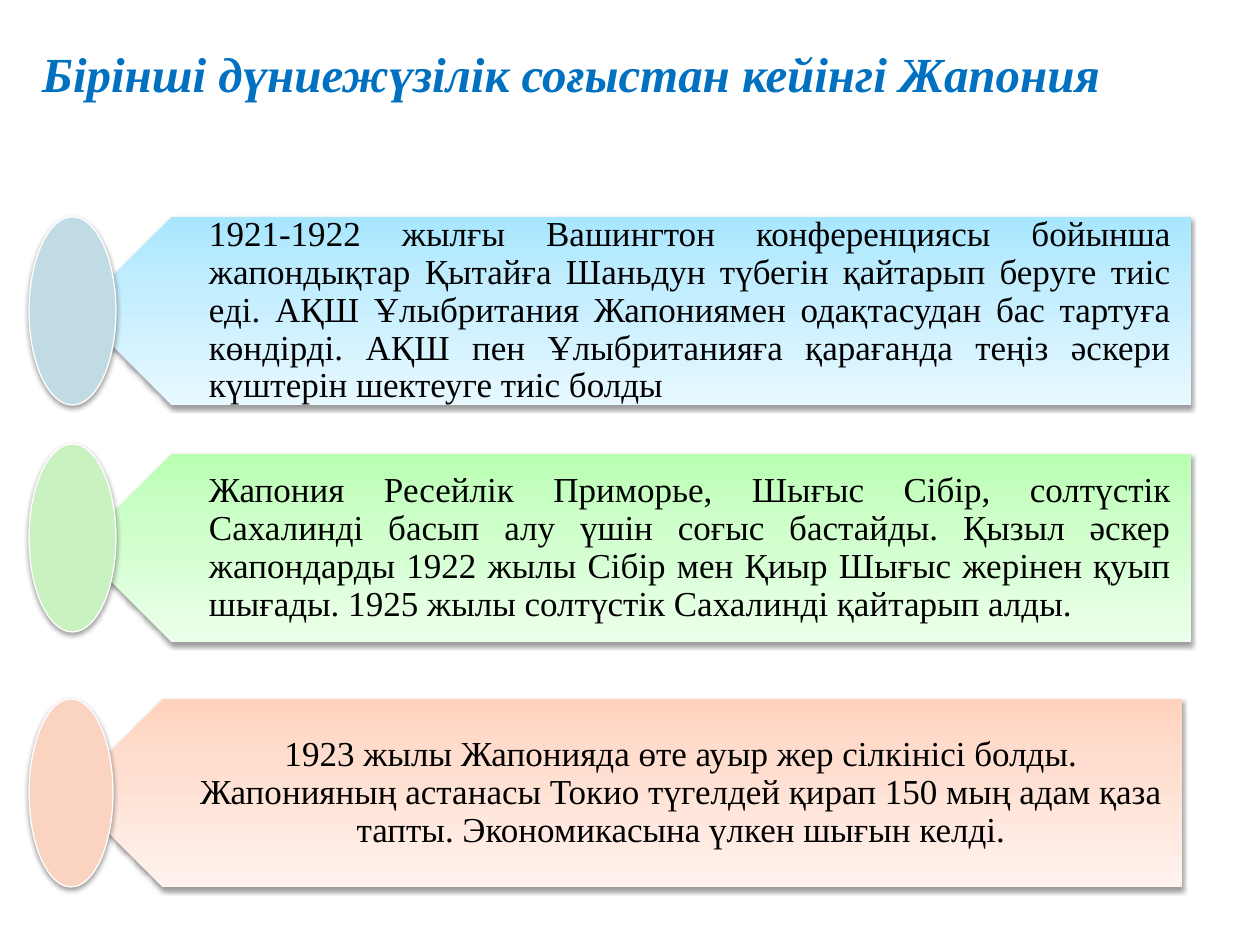
"""Build a slide on Japan after the First World War with three arrow bands."""
import copy
import dataclasses

import pptx
import pptx.dml.color
import pptx.enum.shapes
import pptx.enum.text
import pptx.oxml
import pptx.oxml.ns
import pptx.util

SHAPE = pptx.enum.shapes.MSO_SHAPE
ALIGN = pptx.enum.text.PP_ALIGN
SCALE = 914400 / 126


@dataclasses.dataclass
class Theme:
    """Hold the colours, font and type sizes."""
    font: str = "Times New Roman"
    title: str = "0070C0"
    text: str = "000000"
    edge: str = "FFFFFF"
    head: int = 28
    body: int = 20
    blue: tuple = ("A7E6FF", "C1EDFF", "E7F8FF")
    green: tuple = ("B9FFB2", "CDFFC9", "ECFFEA")
    peach: tuple = ("FFD2BD", "FFDED0", "FFF2ED")
    dots: tuple = ("C1DBE5", "CAF1C0", "FBD3C1")


def emu(px):
    """Turn px into EMU."""
    return pptx.util.Emu(round(px * SCALE))


def color(code):
    """Turn a hex code into a colour."""
    return pptx.dml.color.RGBColor.from_string(code)


class Deck:
    """Hold the style and the current slide."""

    def __init__(self, theme):
        """Start a deck with one blank slide."""
        self.theme = theme
        self.prs = pptx.Presentation()
        self.prs.slide_width, self.prs.slide_height = emu(1260), emu(945)
        self.slide = self.prs.slides.add_slide(self.prs.slide_layouts[6])

    def shape(self, kind, box):
        """Add a preset shape with a soft shadow below it."""
        shape = self.slide.shapes.add_shape(kind, *map(emu, box))
        shape.shadow.inherit = False
        effect = shape.element.spPr.find(pptx.oxml.ns.qn("a:effectLst"))
        effect.append(pptx.oxml.parse_xml(
            f'<a:outerShdw {pptx.oxml.ns.nsdecls("a")} blurRad="39370" '
            'dist="20320" dir="5400000" rotWithShape="0">'
            '<a:srgbClr val="000000"><a:alpha val="38000"/></a:srgbClr>'
            '</a:outerShdw>'))
        return shape

    def arrow(self, box, shades):
        """Add a left-pointing band with a three-stop gradient."""
        shape = self.shape(SHAPE.PENTAGON, box)
        shape.rotation = 180
        shape.line.fill.background()
        shape.fill.gradient()
        shape.fill.gradient_angle = 90
        first = shape.element.xpath(".//a:gs")[0]
        first.addnext(copy.deepcopy(first))
        for stop, shade, place in zip(shape.fill.gradient_stops, shades, (0, 0.35, 1)):
            stop.color.rgb = color(shade)
            stop.position = place

    def dot(self, box, shade):
        """Add an ellipse with a thin edge."""
        shape = self.shape(SHAPE.OVAL, box)
        shape.fill.solid()
        shape.fill.fore_color.rgb = color(shade)
        shape.line.color.rgb = color(self.theme.edge)
        shape.line.width = pptx.util.Pt(0.75)

    def text(self, box, words, size, shade, pads, align=ALIGN.JUSTIFY,
             middle=False, lead=None, strong=None):
        """Add a wrapped text box with one paragraph."""
        frame = self.slide.shapes.add_textbox(*map(emu, box)).text_frame
        frame.word_wrap = True
        (frame.margin_left, frame.margin_top,
         frame.margin_right, frame.margin_bottom) = map(emu, pads)
        anchor = pptx.enum.text.MSO_ANCHOR
        frame.vertical_anchor = anchor.MIDDLE if middle else anchor.TOP
        para = frame.paragraphs[0]
        para.alignment = align
        para.line_spacing = lead
        run = para.add_run()
        run.text = words
        run.font.name = self.theme.font
        run.font.size = pptx.util.Pt(size)
        run.font.color.rgb = color(shade)
        run.font.bold = run.font.italic = strong


def main():
    """Draw the title and the three bands."""
    theme = Theme()
    deck = Deck(theme)
    deck.text((29, 29, 1172, 108), "Бірінші дүниежүзілік соғыстан кейінгі Жапония",
              theme.head, theme.title, (13, 14, 13, 6), strong=True)
    bands = [
        (78, 217, 217, 87, theme.blue, ALIGN.JUSTIFY,
         "1921-1922 жылғы Вашингтон конференциясы бойынша жапондықтар Қытайға "
         "Шаньдун түбегін қайтарып беруге тиіс еді. АҚШ Ұлыбритания Жапониямен "
         "одақтасудан бас тартуға көндірді. АҚШ пен Ұлыбританияға қарағанда "
         "теңіз әскери күштерін шектеуге тиіс болды"),
        (78, 454, 444, 87, theme.green, ALIGN.JUSTIFY,
         "Жапония Ресейлік Приморье, Шығыс Сібір, солтүстік Сахалинді басып алу "
         "үшін соғыс бастайды. Қызыл әскер жапондарды 1922 жылы Сібір мен Қиыр "
         "Шығыс жерінен қуып шығады. 1925 жылы солтүстік Сахалинді қайтарып алды."),
        (69, 699, 699, 84, theme.peach, ALIGN.CENTER,
         "1923 жылы Жапонияда өте ауыр жер сілкінісі болды. Жапонияның астанасы "
         "Токио түгелдей қирап 150 мың адам қаза тапты. Экономикасына үлкен "
         "шығын келді."),
    ]
    tall = 188
    for (left, top, high, wide, shades, align, words), shade in zip(bands, theme.dots):
        deck.arrow((left, top, 1113, tall), shades)
        deck.text((left + 48, top, 1065, tall), words, theme.body, theme.text,
                  (83, 10, 20, 10), align, middle=True, lead=0.9)
        deck.dot((29, high, wide, tall), shade)
    deck.prs.save("out.pptx")


if __name__ == "__main__":
    main()
